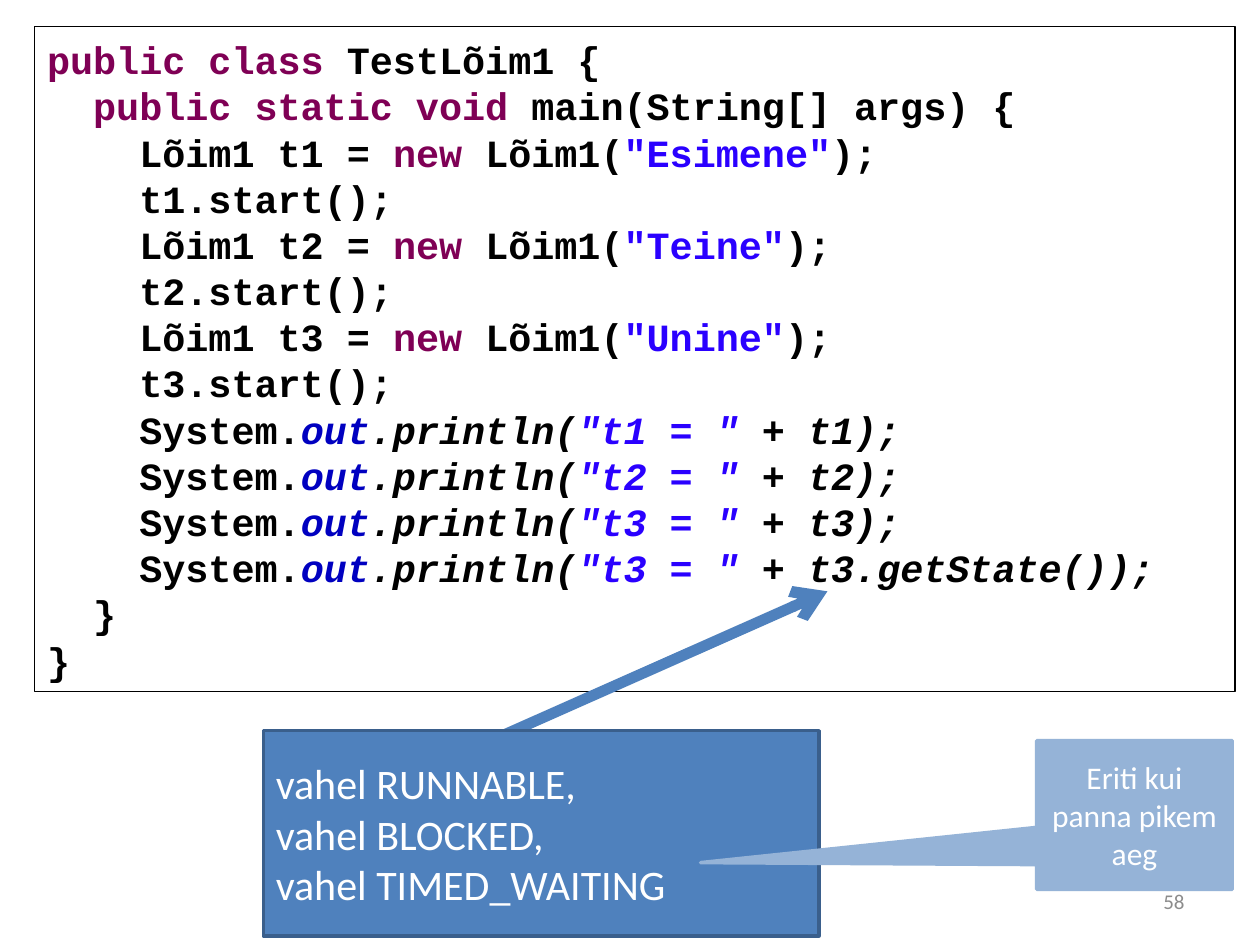
from lxml import etree
from pptx import Presentation
from pptx.dml.color import RGBColor
from pptx.enum.shapes import MSO_CONNECTOR, MSO_SHAPE
from pptx.enum.text import MSO_ANCHOR, PP_ALIGN
from pptx.oxml.ns import qn
from pptx.util import Cm, Pt

RECTANGLE, CALLOUT = MSO_SHAPE.RECTANGLE, MSO_SHAPE.RECTANGULAR_CALLOUT
STRAIGHT = MSO_CONNECTOR.STRAIGHT
TOP, MIDDLE = MSO_ANCHOR.TOP, MSO_ANCHOR.MIDDLE
LEFT, CENTER, RIGHT = PP_ALIGN.LEFT, PP_ALIGN.CENTER, PP_ALIGN.RIGHT

BLACK = RGBColor(0x00, 0x00, 0x00)
WHITE = RGBColor(0xFF, 0xFF, 0xFF)
GREY = RGBColor(0x8C, 0x8C, 0x8C)
BLUE = RGBColor(0x4F, 0x81, 0xBD)
DARK_BLUE = RGBColor(0x3A, 0x5F, 0x8C)
PALE_BLUE = RGBColor(0x95, 0xB3, 0xD7)
KEYWORD = RGBColor(0x7F, 0x00, 0x55)
STRING = RGBColor(0x2A, 0x00, 0xFF)
FIELD = RGBColor(0x00, 0x00, 0xC0)

THREADS = [("t1", "Esimene"), ("t2", "Teine"), ("t3", "Unine")]
PRINTS = [("t1", "t1"), ("t2", "t2"), ("t3", "t3"), ("t3", "t3.getState()")]
STATES = ["vahel RUNNABLE,", "vahel BLOCKED,", "vahel TIMED_WAITING"]
REMARK = ["Eriti kui panna pikem aeg"]
PAGE_NUMBER = ["58"]
INDENT = Cm(0.93)  # two characters of the code font


def code_lines():
    """Yield (indent level, spans); a span is (text, colour, italic)."""
    yield 0, [("public class", KEYWORD, False), (" TestLõim1 {", BLACK, False)]
    yield 1, [("public static void", KEYWORD, False),
              (" main(String[] args) {", BLACK, False)]
    for name, label in THREADS:
        yield 2, [(f"Lõim1 {name} = ", BLACK, False), ("new", KEYWORD, False),
                  (" Lõim1(", BLACK, False), (f'"{label}"', STRING, False),
                  (");", BLACK, False)]
        yield 2, [(f"{name}.start();", BLACK, False)]
    for label, value in PRINTS:
        yield 2, [("System.", BLACK, False), ("out", FIELD, True),
                  (".println(", BLACK, True), (f'"{label} = "', STRING, True),
                  (f" + {value});", BLACK, True)]
    yield 1, [("}", BLACK, False)]
    yield 0, [("}", BLACK, False)]


def add_box(page, kind, place, fill, line, width, anchor=MIDDLE):
    box = page.shapes.add_shape(kind, *map(Cm, place))
    box.shadow.inherit = False
    if fill is None:
        box.fill.background()
    else:
        box.fill.solid()
        box.fill.fore_color.rgb = fill
    box.line.color.rgb = line
    box.line.width = Pt(width)
    box.text_frame.vertical_anchor = anchor
    return box


def add_paragraphs(frame, count):
    return [frame.paragraphs[0]] + [frame.add_paragraph() for _ in range(count - 1)]


def write_lines(frame, lines, size, color, align):
    frame.word_wrap = True
    for para, text in zip(add_paragraphs(frame, len(lines)), lines):
        para.text = text
        para.alignment = align
        para.font.name = "Calibri"
        para.font.size = Pt(size)
        para.font.color.rgb = color


def write_code(frame):
    frame.word_wrap = True
    frame.margin_top = Cm(0.2)
    lines = list(code_lines())
    for para, (level, spans) in zip(add_paragraphs(frame, len(lines)), lines):
        para.alignment = LEFT
        para.line_spacing = Pt(26.4)
        para.font.name = "Courier New"
        para.font.size = Pt(22)
        para.font.bold = True
        para._p.get_or_add_pPr().set("marL", str(level * INDENT))
        for text, color, italic in spans:
            span = para.add_run()
            span.text = text
            span.font.color.rgb = color
            span.font.italic = italic


def add_arrow(page, start, end):
    arrow = page.shapes.add_connector(STRAIGHT, *map(Cm, start + end))
    arrow.line.color.rgb = BLUE
    arrow.line.width = Pt(6.25)
    etree.SubElement(arrow.line._get_or_add_ln(), qn("a:tailEnd"), type="arrow")
    etree.SubElement(arrow._element.spPr, qn("a:effectLst"))


def main():
    deck = Presentation()
    deck.slide_width, deck.slide_height = Cm(25.4), Cm(19.05)
    page = deck.slides.add_slide(deck.slide_layouts[6])

    number = page.shapes.add_textbox(Cm(18.2), Cm(17.66), Cm(5.93), Cm(1.01))
    number.text_frame.vertical_anchor = MIDDLE
    write_lines(number.text_frame, PAGE_NUMBER, 12, GREY, RIGHT)

    code = add_box(page, RECTANGLE, (0.7, 0.53, 24.2, 13.41), None, BLACK, 0.75, TOP)
    write_code(code.text_frame)

    add_arrow(page, (9.9, 14.93), (16.68, 11.92))

    states = add_box(page, RECTANGLE, (5.31, 14.73, 11.2, 4.14), BLUE, DARK_BLUE, 2)
    write_lines(states.text_frame, STATES, 24, WHITE, LEFT)

    remark = add_box(page, CALLOUT, (20.9, 14.93, 3.94, 3), PALE_BLUE, PALE_BLUE, 2)
    remark.adjustments[0], remark.adjustments[1] = -2.22, 0.32
    write_lines(remark.text_frame, REMARK, 18, WHITE, CENTER)

    deck.save("out.pptx")


if __name__ == "__main__":
    main()
